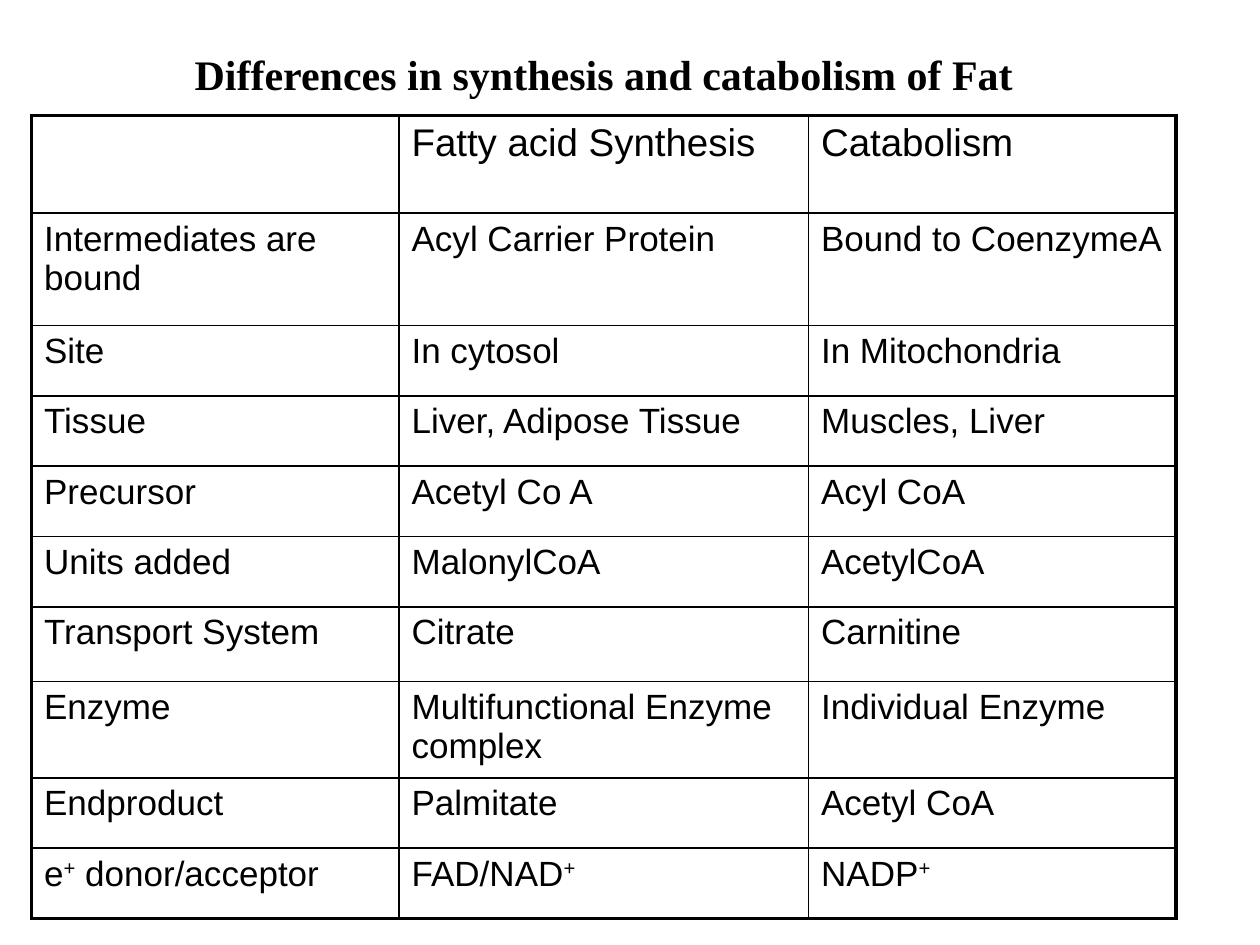
from dataclasses import dataclass

from lxml.etree import SubElement
from pptx import Presentation
from pptx.dml.color import RGBColor
from pptx.enum.text import MSO_ANCHOR as Anchor, PP_ALIGN as Align
from pptx.oxml.ns import qn
from pptx.util import Inches, Pt

GRID_COLUMNS, GRID_ROWS = 120, 90


@dataclass(frozen=True)
class Theme:
    ink: str = "000000"
    title_font: str = "Times New Roman"
    table_font: str = "Arial"
    title_size: int = 24
    header_size: int = 22
    body_size: int = 20
    outer_line: float = 2.25
    inner_line: float = 1


class SlideBuilder:
    def __init__(self, deck, theme):
        self.theme = theme
        self.slide = deck.slides.add_slide(deck.slide_layouts[5])
        self.column = deck.slide_width / GRID_COLUMNS
        self.row = deck.slide_height / GRID_ROWS

    def place(self, left, top, width, height):
        """Turn grid units into slide lengths."""
        return {
            "left": round(left * self.column),
            "top": round(top * self.row),
            "width": round(width * self.column),
            "height": round(height * self.row),
        }

    def add_run(self, paragraph, text, name, size, bold=False, raised=False):
        run = paragraph.add_run()
        run.text = text
        for attribute, value in {"name": name, "size": Pt(size), "bold": bold}.items():
            setattr(run.font, attribute, value)
        run.font.color.rgb = RGBColor.from_string(self.theme.ink)
        if raised:
            run.font._element.set("baseline", "30000")

    def title(self, text, *area):
        heading = self.slide.shapes.title
        for attribute, value in self.place(*area).items():
            setattr(heading, attribute, value)
        frame = heading.text_frame
        frame.word_wrap = True
        frame.vertical_anchor = Anchor.TOP
        paragraph = frame.paragraphs[0]
        paragraph.alignment = Align.CENTER
        self.add_run(paragraph, text, self.theme.title_font, self.theme.title_size, bold=True)

    def border(self, cell, side, width):
        line = SubElement(cell._tc.get_or_add_tcPr(), qn(f"a:ln{side}"), w=str(Pt(width)))
        fill = SubElement(line, qn("a:solidFill"))
        SubElement(fill, qn("a:srgbClr"), val=self.theme.ink)

    def cell_text(self, cell, text, size):
        """Write the text, raising each plus sign."""
        paragraph = cell.text_frame.paragraphs[0]
        for part in text.partition("+"):
            if part:
                self.add_run(paragraph, part, self.theme.table_font, size, raised=part == "+")

    def table(self, records, left, top, widths, heights):
        area = self.place(left, top, sum(widths), sum(heights))
        table = self.slide.shapes.add_table(len(heights), len(widths), **area).table
        table.first_row = table.horz_banding = False
        for column, width in zip(table.columns, widths):
            column.width = round(width * self.column)
        for row, height in zip(table.rows, heights):
            row.height = round(height * self.row)
        theme = self.theme
        last_row, last_column = len(heights) - 1, len(widths) - 1
        for r, record in enumerate(records):
            for c, text in enumerate(record):
                cell = table.cell(r, c)
                on_edge = {"L": c == 0, "R": c == last_column, "T": r == 0, "B": r == last_row}
                for side, outer in on_edge.items():
                    self.border(cell, side, theme.outer_line if outer else theme.inner_line)
                cell.fill.background()
                self.cell_text(cell, text, theme.body_size if r else theme.header_size)


COMPARISON = [
    ("", "Fatty acid Synthesis", "Catabolism"),
    ("Intermediates are bound", "Acyl Carrier Protein", "Bound to CoenzymeA"),
    ("Site", "In cytosol", "In Mitochondria"),
    ("Tissue", "Liver, Adipose Tissue", "Muscles, Liver"),
    ("Precursor", "Acetyl Co A", "Acyl CoA"),
    ("Units added", "MalonylCoA", "AcetylCoA"),
    ("Transport System", "Citrate", "Carnitine"),
    ("Enzyme", "Multifunctional Enzyme complex", "Individual Enzyme"),
    ("Endproduct", "Palmitate", "Acetyl CoA"),
    ("e+ donor/acceptor", "FAD/NAD+", "NADP+"),
]
SINGLE_ROW = 6.7
ROW_HEIGHTS = [9.3, 10.7, *[SINGLE_ROW] * 4, 7.1, 9.2, *[SINGLE_ROW] * 2]
COLUMN_WIDTHS = [35, 39, 35]


def main():
    deck = Presentation()
    deck.slide_width, deck.slide_height = Inches(10), Inches(7.5)
    builder = SlideBuilder(deck, Theme())
    builder.title("Differences in synthesis and catabolism of Fat", 6, 4, 103, 6)
    builder.table(COMPARISON, 3, 11, COLUMN_WIDTHS, ROW_HEIGHTS)
    deck.save("out.pptx")


if __name__ == "__main__":
    main()
